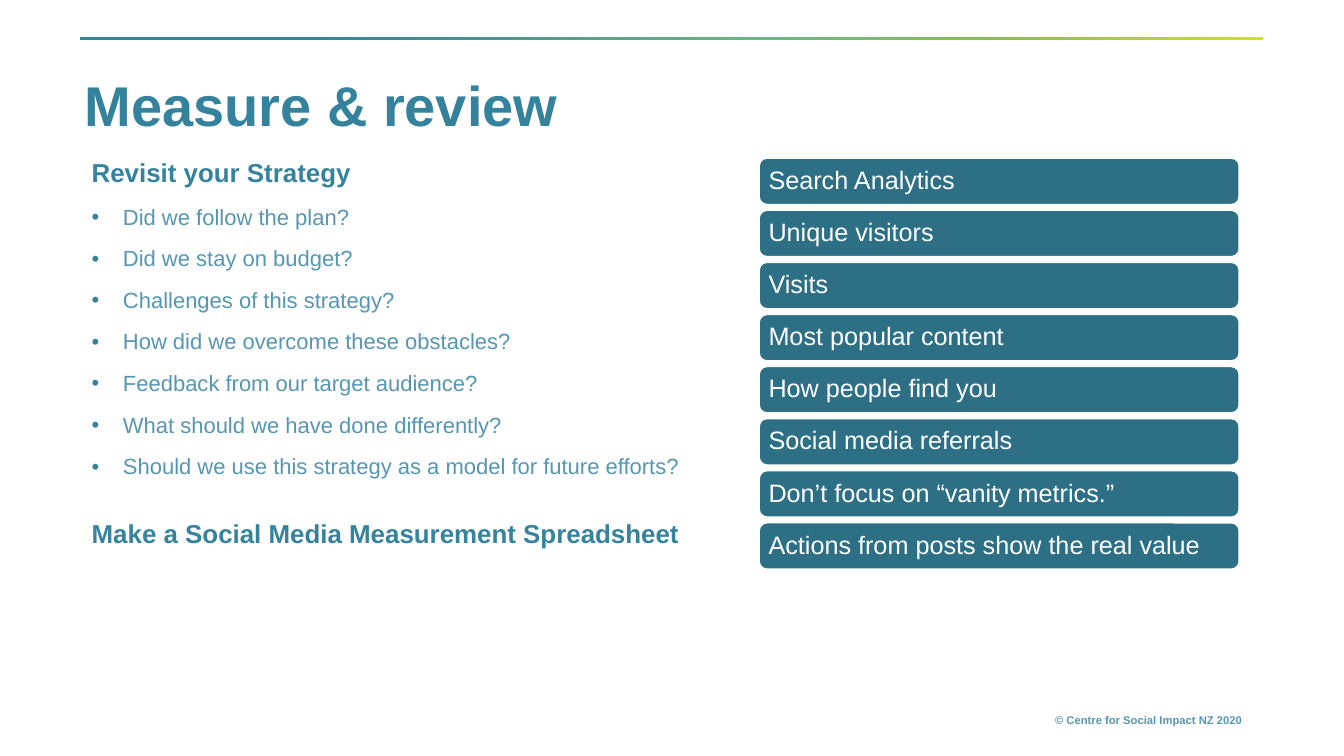
from dataclasses import dataclass

from lxml import etree
from pptx import Presentation
from pptx import util as u
from pptx.dml.color import RGBColor
from pptx.enum import shapes, text
from pptx.oxml import ns

FONT = "Arial"
TEAL, TITLE_TEAL, SKY, DEEP, WHITE = "35839C", "35829C", "5596B2", "2D7086", "FFFFFF"
WIDTH, HEIGHT = u.Inches(13.33), u.Inches(7.5)
BULLET_INDENT = u.Inches(0.31)
RULE_STOPS = [(0, TEAL), (20, TEAL), (59, "69BA80"), (78, "8CBF52"), (100, "D2DC36")]

REVIEW_QUESTIONS = [
    "Did we follow the plan?",
    "Did we stay on budget?",
    "Challenges of this strategy?",
    "How did we overcome these obstacles?",
    "Feedback from our target audience?",
    "What should we have done differently?",
    "Should we use this strategy as a model for future efforts?",
]
METRICS = [
    "Search Analytics",
    "Unique visitors",
    "Visits",
    "Most popular content",
    "How people find you",
    "Social media referrals",
    "Don’t focus on “vanity metrics.”",
    "Actions from posts show the real value",
]


@dataclass(frozen=True)
class Area:
    """A rectangle in percent of the slide's width and height."""
    left: float
    top: float
    width: float
    height: float

    def lengths(self) -> tuple[int, int, int, int]:
        return (int(WIDTH * self.left / 100), int(HEIGHT * self.top / 100),
                int(WIDTH * self.width / 100), int(HEIGHT * self.height / 100))


RULE = Area(5.93, 4.93, 88.07, 0.4)
TITLE = Area(5.55, 6.53, 39.83, 15.6)
REVIEW = Area(6.08, 20.4, 47.11, 57.47)
FOOTER = Area(66.69, 93.73, 26.48, 3.2)
FIRST_METRIC = Area(56.49, 20.93, 35.71, 6.13)
METRIC_PITCH = 6.89


def colour(value: str) -> RGBColor:
    return RGBColor.from_string(value)


def add_bullet(para) -> None:
    properties = para._p.get_or_add_pPr()
    properties.set("marL", str(BULLET_INDENT))
    properties.set("indent", str(-BULLET_INDENT))
    bullet_colour = etree.SubElement(properties, ns.qn("a:buClr"))
    etree.SubElement(bullet_colour, ns.qn("a:srgbClr"), val=TITLE_TEAL)
    etree.SubElement(properties, ns.qn("a:buFont"), typeface=FONT)
    etree.SubElement(properties, ns.qn("a:buChar"), char="•")


def write(frame, words: str, *, size: float, fill: str, bold: bool = False,
          align=text.PP_ALIGN.LEFT, spacing: float = 1.0, before: float = 0,
          after: float = 0, bullet: bool = False) -> None:
    """Fill the frame's empty first paragraph, or append another one."""
    para = frame.paragraphs[0] if not frame.text else frame.add_paragraph()
    if bullet:
        add_bullet(para)
    para.alignment = align
    para.line_spacing = spacing
    para.space_before, para.space_after = u.Pt(before), u.Pt(after)
    span = para.add_run()
    span.text = words
    span.font.name, span.font.size, span.font.bold = FONT, u.Pt(size), bold
    span.font.color.rgb = colour(fill)


def add_text_frame(page, area: Area, anchor=text.MSO_ANCHOR.TOP):
    frame = page.shapes.add_textbox(*area.lengths()).text_frame
    frame.word_wrap = True
    frame.vertical_anchor = anchor
    return frame


def add_rule(page) -> None:
    rule = page.shapes.add_shape(shapes.MSO_SHAPE.RECTANGLE, *RULE.lengths())
    rule.shadow.inherit = False
    rule.line.fill.background()
    rule.fill.gradient()
    rule.fill.gradient_angle = 0
    stops = rule._element.spPr.find(ns.qn("a:gradFill")).find(ns.qn("a:gsLst"))
    for old_stop in list(stops):
        stops.remove(old_stop)
    for percent, value in RULE_STOPS:
        stop = etree.SubElement(stops, ns.qn("a:gs"), pos=str(percent * 1000))
        etree.SubElement(stop, ns.qn("a:srgbClr"), val=value)


def add_review(page) -> None:
    frame = add_text_frame(page, REVIEW)
    heading = dict(size=18.5, fill=TEAL, bold=True, spacing=0.94, after=6)
    write(frame, "Revisit your Strategy", **heading)
    for question in REVIEW_QUESTIONS:
        write(frame, question, size=15.7, fill=SKY, spacing=0.94,
              before=6, after=6, bullet=True)
    write(frame, "Make a Social Media Measurement Spreadsheet", before=23, **heading)


def add_metric(page, row: int, words: str) -> None:
    area = Area(FIRST_METRIC.left, FIRST_METRIC.top + row * METRIC_PITCH,
                FIRST_METRIC.width, FIRST_METRIC.height)
    box = page.shapes.add_shape(shapes.MSO_SHAPE.ROUNDED_RECTANGLE, *area.lengths())
    box.shadow.inherit = False
    box.fill.solid()
    box.fill.fore_color.rgb = colour(DEEP)
    box.line.color.rgb = colour(WHITE)
    box.line.width = u.Pt(1)
    frame = box.text_frame
    frame.word_wrap = True
    frame.vertical_anchor = text.MSO_ANCHOR.MIDDLE
    frame.margin_left = frame.margin_right = u.Inches(0.07)
    frame.margin_top = frame.margin_bottom = 0
    write(frame, words, size=18, fill=WHITE, spacing=0.9)


def main() -> None:
    deck = Presentation()
    deck.slide_width, deck.slide_height = WIDTH, HEIGHT
    page = deck.slides.add_slide(deck.slide_layouts[6])
    write(add_text_frame(page, FOOTER), "© Centre for Social Impact NZ 2020",
          size=8, fill=SKY, bold=True, align=text.PP_ALIGN.RIGHT)
    add_rule(page)
    write(add_text_frame(page, TITLE, text.MSO_ANCHOR.MIDDLE), "Measure & review",
          size=40, fill=TITLE_TEAL, bold=True, spacing=0.9)
    add_review(page)
    for row, words in enumerate(METRICS):
        add_metric(page, row, words)
    deck.save("out.pptx")


if __name__ == "__main__":
    main()
